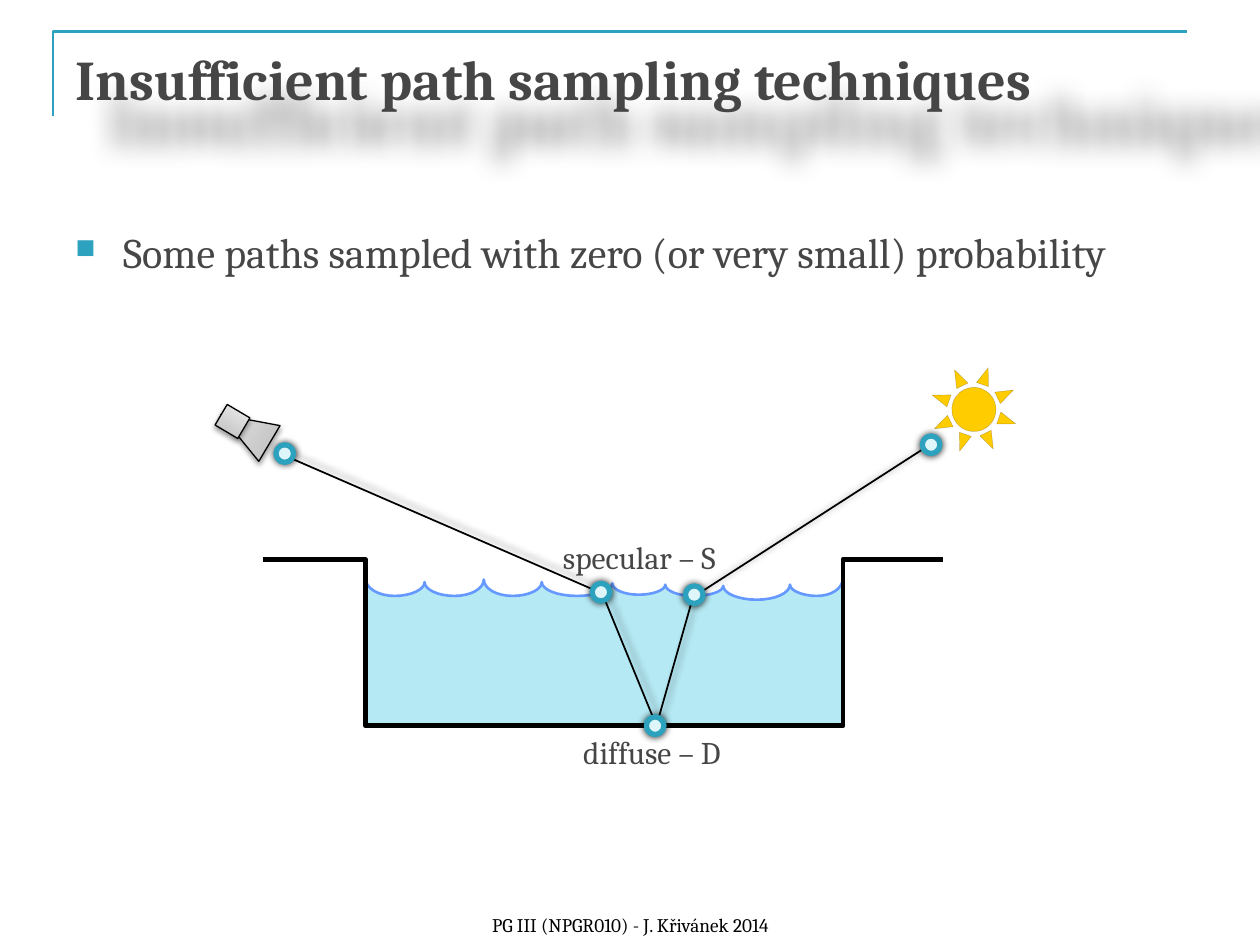
from math import cos, pi, sin
from lxml import etree
from pptx import Presentation
from pptx.dml.color import RGBColor
from pptx.enum.shapes import MSO_SHAPE
from pptx.enum.text import MSO_ANCHOR, PP_ALIGN
from pptx.oxml.ns import qn
from pptx.util import Inches, Pt

RECT, TRI = MSO_SHAPE.RECTANGLE, MSO_SHAPE.ISOSCELES_TRIANGLE
SUN, DOT = MSO_SHAPE.SUN, MSO_SHAPE.OVAL
TOP, BOTTOM = MSO_ANCHOR.TOP, MSO_ANCHOR.BOTTOM
LEFT, CENTER = PP_ALIGN.LEFT, PP_ALIGN.CENTER
WIDE, HIGH = 10, 7.5
TEAL, GREY, BLACK = "2DA2BF", "464646", "000000"

# Content: words, box, font format, anchor, alignment, wrap
TITLE = ("Insufficient path sampling techniques", (0.5, 0.3, 9, 1.25),
         {"size": Pt(32), "bold": True}, GREY, TOP, LEFT, True)
BODY = ("Some paths sampled with zero (or very small) probability",
        (0.5, 1.75, 9, 4.95), {"size": Pt(24)}, GREY, TOP, LEFT, True)
FOOT = ("PG III (NPGR010) - J. Křivánek 2014", (1.54, 6.98, 6.93, 0.5),
        {"size": Pt(11)}, BLACK, BOTTOM, CENTER, True)
LABELS = [("diffuse – D", (4.53, 5.77, 1.44, 0.4)),
          ("specular – S", (4.37, 4.22, 1.57, 0.4))]

# Scene, in inches
FRAME = [(0.42, 0.92), (0.42, 0.25), (9.42, 0.25)]
CAMERA = [(TRI, (1.78, 3.18, 0.33, 0.45), 300.7),
          (RECT, (1.74, 3.25, 0.21, 0.19), 30.6)]
CRESTS = [(2.9, 4.59), (3.37, 4.62), (3.84, 4.6), (4.3, 4.62), (4.86, 4.63),
          (5.28, 4.64), (5.74, 4.65), (6.27, 4.64), (6.69, 4.59)]
DIPS = [4.73, 4.73, 4.73, 4.73, 4.72, 4.73, 4.76, 4.73]
FLOOR, RIM = 5.76, 4.44
PATH = [(2.2, 3.59), (4.78, 4.71), (5.21, 5.76), (5.5, 4.74), (7.41, 3.51)]
DOTS = [(5.2, 5.76), (5.51, 4.72), (4.77, 4.7), (7.39, 3.53), (2.26, 3.6)]
SIZE = 0.14

# Shadows: opacity %, blur pt, distance pt, angle, scale %
SOFT, CAST = (38, 3.1, 1.6, 90, 100), (40, 4, 3, 315, 100)
GLOW, BLUR = (80, 4, 0, 129, 100), (40, 15, 24, 45, 125)

prs = Presentation()
prs.slide_width, prs.slide_height = Inches(WIDE), Inches(HIGH)
slide = prs.slides.add_slide(prs.slide_layouts[6])
shapes = slide.shapes


def tint(hue):
    return RGBColor.from_string(hue)


def node(up, tag, **vals):
    return etree.SubElement(up, qn(tag), {k: str(v) for k, v in vals.items()})


def shade(item, cast):
    item.shadow.inherit = False
    if cast:
        fade, blur, dist, turn, grow = cast
        fx = item._element.spPr.find(qn("a:effectLst"))
        drop = node(fx, "a:outerShdw", blurRad=Pt(blur), dist=Pt(dist),
                    dir=turn * 60000, sx=grow * 1000, sy=grow * 1000,
                    algn="tl", rotWithShape=0)
        hue = node(drop, "a:srgbClr", val=BLACK)
        node(hue, "a:alpha", val=fade * 1000)


def paint(item, fill, line, width, cast=None):
    if fill is None:
        item.fill.background()
    elif isinstance(fill, tuple):
        item.fill.gradient()
        item.fill.gradient_angle = 90
        for stop, hue in zip(item.fill.gradient_stops, fill):
            stop.color.rgb = tint(hue)
        for stop, spot in zip(item.fill.gradient_stops, (0, 1)):
            stop.position = spot
    else:
        item.fill.solid()
        item.fill.fore_color.rgb = tint(fill)
    item.line.color.rgb = tint(line)
    item.line.width = Pt(width)
    shade(item, cast)
    return item


def form(kind, box, turn=0):
    item = shapes.add_shape(kind, *map(Inches, box))
    item.rotation = turn
    return item


def trace(dots, close=False):
    pts = [(Inches(x), Inches(y)) for x, y in dots]
    pen = shapes.build_freeform(*pts[0], scale=1)
    pen.add_line_segments(pts[1:], close=close)
    return pen.convert_to_shape()


def write(words, box, form, hue, anchor, align, wrap):
    item = shapes.add_textbox(*map(Inches, box))
    frame = item.text_frame
    frame.word_wrap, frame.vertical_anchor = wrap, anchor
    para = frame.paragraphs[0]
    para.alignment = align
    run = para.add_run()
    run.text = words
    for key, val in {"name": "Cambria", **form}.items():
        setattr(run.font, key, val)
    run.font.color.rgb = tint(hue)
    return item


# Corner rule and title
paint(trace(FRAME), None, TEAL, 1.5)
shade(write(*TITLE), BLUR)

# Bulleted line
ppr = write(*BODY).text_frame.paragraphs[0]._p.get_or_add_pPr()
ppr.set("marL", str(Inches(0.38)))
ppr.set("indent", str(Inches(-0.38)))
node(node(ppr, "a:buClr"), "a:srgbClr", val=TEAL)
node(ppr, "a:buSzPct", val=65000)
node(ppr, "a:buChar", char="■")

# Sun with a faint outline, and camera
sun = paint(form(SUN, (7.38, 2.9, 0.7, 0.7), 18.9), "FFCC00", BLACK, 0.25)
edge = sun._element.spPr.find(qn("a:ln")).find(".//" + qn("a:srgbClr"))
node(edge, "a:alpha", val=24000)
for part in CAMERA:
    paint(form(*part), ("BDBDBD", "EEEEEE"), BLACK, 0.75, SOFT)

# Water: half an ellipse hangs between each pair of crests
STEPS = 16
waves = []
for (x1, y1), (x2, y2), dip in zip(CRESTS, CRESTS[1:], DIPS):
    for step in range(STEPS + 1):
        turn = pi * step / STEPS
        part = (1 - cos(turn)) / 2
        rest = y1 + (y2 - y1) * part
        waves.append((x1 + (x2 - x1) * part, rest + (dip - rest) * sin(turn)))
west, east = CRESTS[0][0], CRESTS[-1][0]
paint(trace(waves + [(east, FLOOR), (west, FLOOR)], True),
      "B5E9F4", "6699FF", 1.5)

# Pool walls and light path
pool = [(7.48, RIM), (east, RIM), (east, FLOOR),
        (west, FLOOR), (west, RIM), (2.09, RIM)]
paint(trace(pool), None, BLACK, 2.75)
paint(trace(PATH), None, BLACK, 1, CAST)

# Path vertices
for x, y in DOTS:
    box = (x - SIZE / 2, y - SIZE / 2, SIZE, SIZE)
    paint(form(DOT, box), "DEF5FA", TEAL, 3, GLOW)

# Labels and footer
for words, box in LABELS:
    write(words, box, {"size": Pt(18)}, GREY, TOP, LEFT, False)
write(*FOOT)

prs.save("out.pptx")
